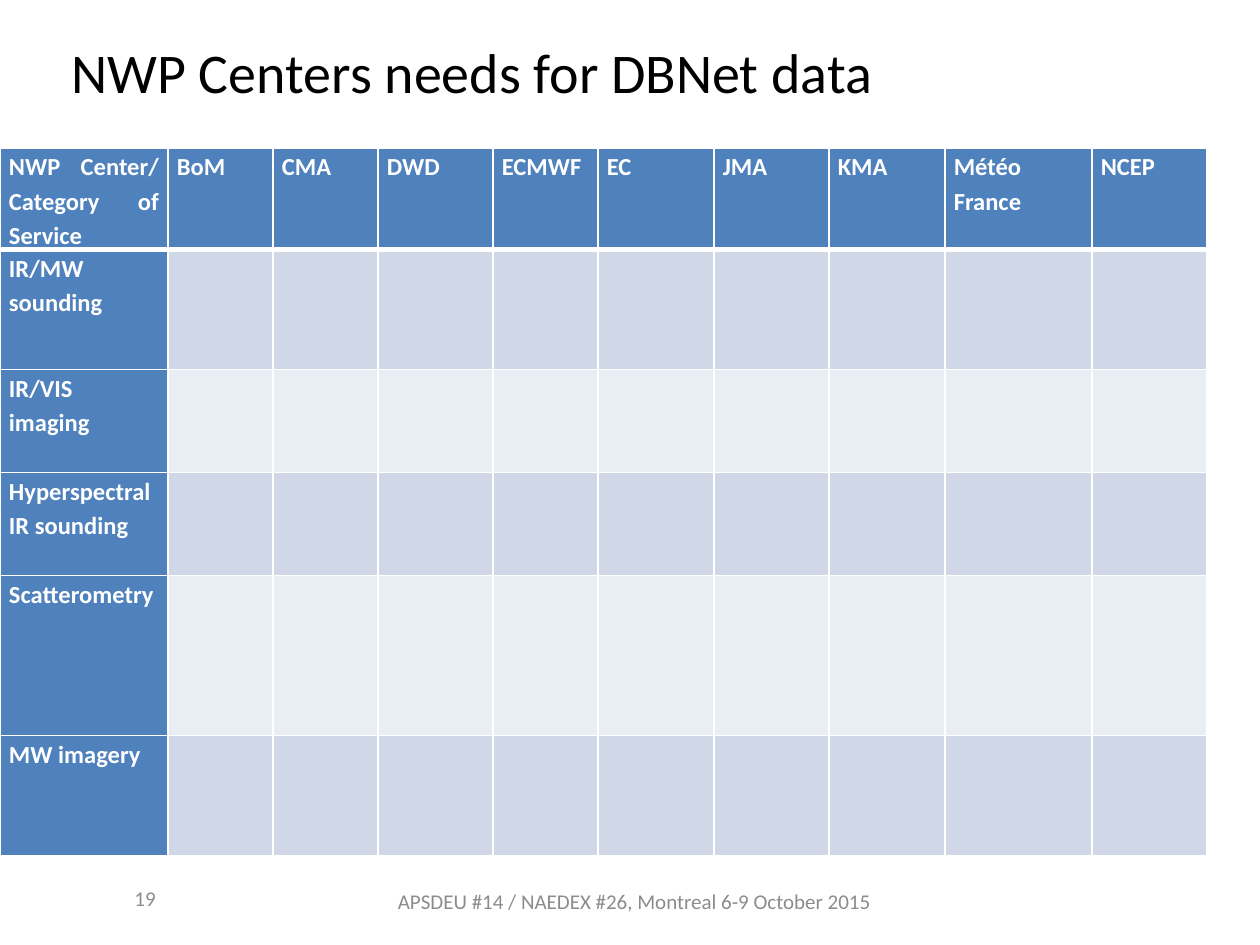
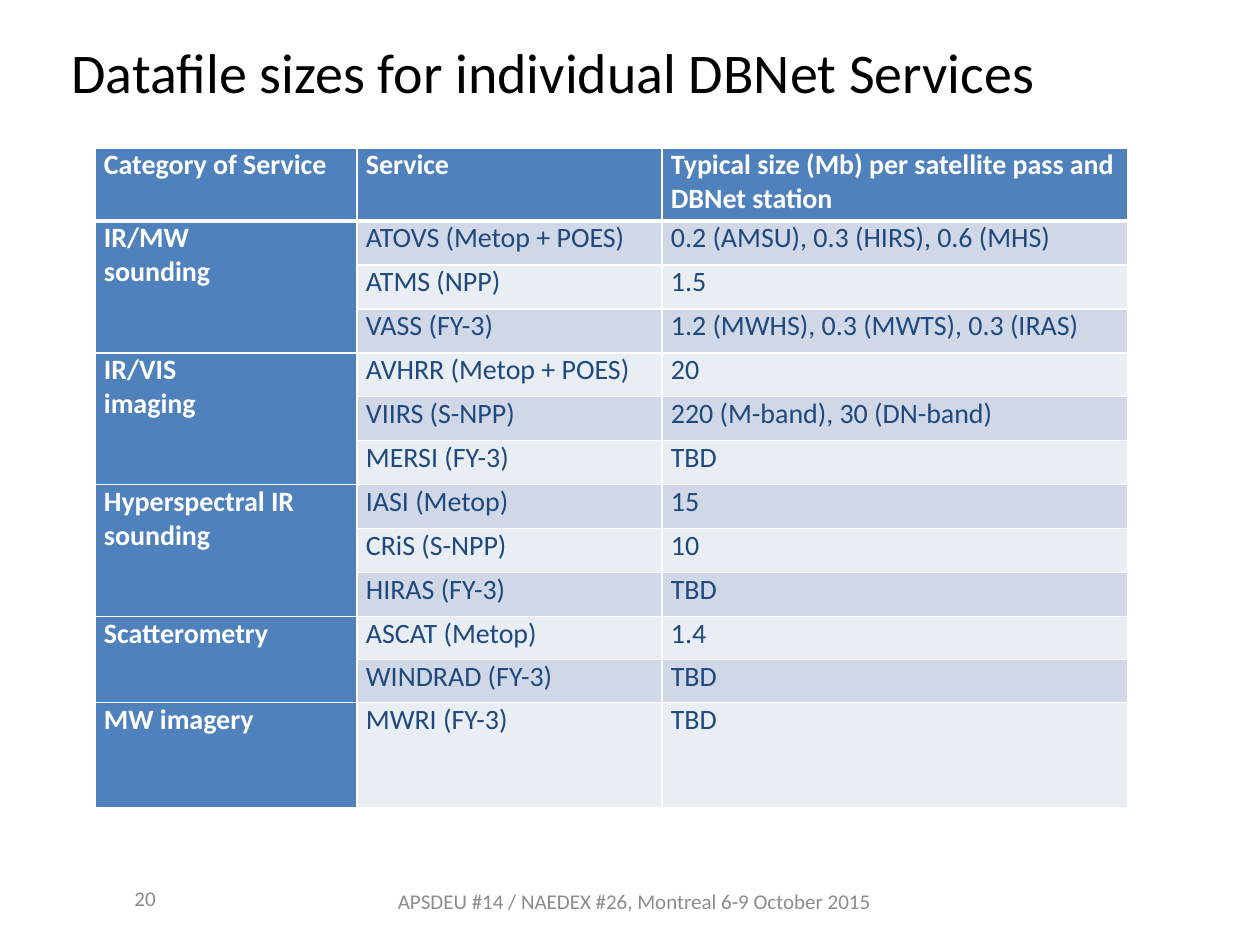
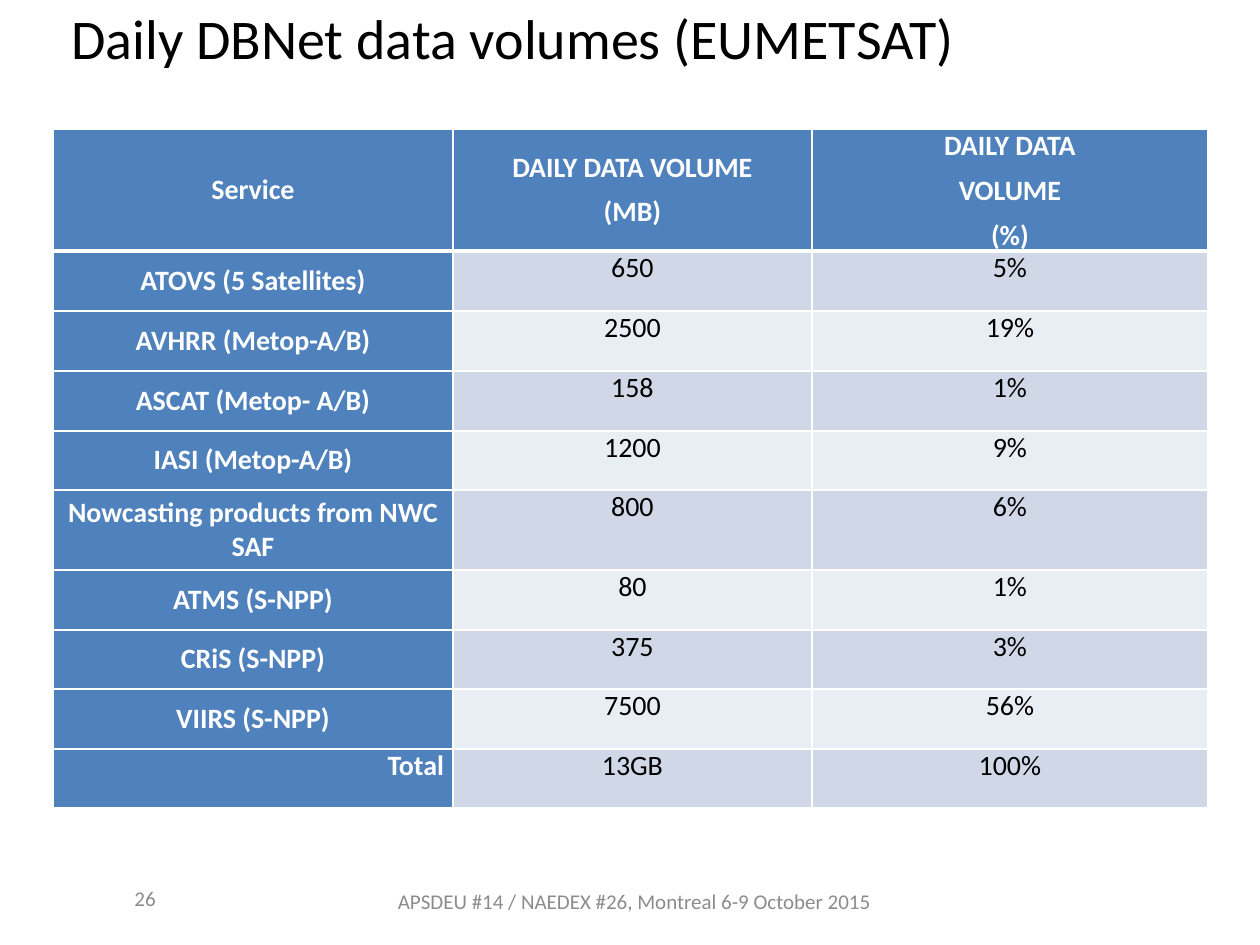
from dataclasses import dataclass

from lxml import etree
from pptx import Presentation
from pptx import util as u
from pptx.dml import color
from pptx.enum import text as t
from pptx.oxml import ns

SCALE = 914400 / 126
ALIGN, ANCHOR = t.PP_ALIGN, t.MSO_ANCHOR


@dataclass(frozen=True)
class Theme:
    """Colours, font and type sizes shared by the slides."""
    font: str = "Calibri"
    black: str = "000000"
    white: str = "FFFFFF"
    navy: str = "1F497D"
    grey: str = "8C8C8C"
    accent: str = "4F81BD"
    bands: tuple = ("D0D8E8", "E9EDF4")
    title: int = 32
    footer: int = 12
    compact: int = 14
    regular: int = 16


@dataclass(frozen=True)
class GridStyle:
    """Typography of one table."""
    size: int
    body: str = "000000"
    spacing: float = 1.0
    header_gap: int = 0
    gap: int = 0
    header_align: int = ALIGN.LEFT
    align: int = ALIGN.LEFT
    label_anchor: int = ANCHOR.TOP


THEME = Theme()
TITLE_BOX = (59, 26, 1149, 91)
RAISED_TITLE_BOX = (59, 3, 1149, 68)
FOOTER_BOX = (372, 876, 525, 50)
NUMBER_BOX = (62, 873, 106, 50)
EVENT = "APSDEU #14 / NAEDEX #26, Montreal 6-9 October 2015"

CENTERS = ["NWP Center/ Category of Service", "BoM", "CMA", "DWD", "ECMWF",
           "EC", "JMA", "KMA", "Météo France", "NCEP"]
CATEGORIES = ["IR/MW\vsounding", "IR/VIS\vimaging", "Hyperspectral IR sounding",
              "Scatterometry", "MW imagery"]
FILE_SIZES = [
    [("ATOVS (Metop + POES)", "0.2 (AMSU), 0.3 (HIRS), 0.6 (MHS)"),
     ("ATMS (NPP)", "1.5"),
     ("VASS (FY-3)", "1.2 (MWHS), 0.3 (MWTS), 0.3 (IRAS)")],
    [("AVHRR (Metop + POES)", "20"),
     ("VIIRS (S-NPP)", "220 (M-band), 30 (DN-band)"),
     ("MERSI (FY-3)", "TBD")],
    [("IASI (Metop)", "15"), ("CRiS (S-NPP)", "10"), ("HIRAS (FY-3)", "TBD")],
    [("ASCAT (Metop)", "1.4"), ("WINDRAD (FY-3)", "TBD")],
    [("MWRI (FY-3)", "TBD")],
]
VOLUMES = [
    ("Service", "DAILY DATA VOLUME\n(MB)", "DAILY DATA\nVOLUME\n(%)"),
    ("ATOVS (5 Satellites)", "650", "5%"),
    ("AVHRR (Metop-A/B)", "2500", "19%"),
    ("ASCAT (Metop- A/B)", "158", "1%"),
    ("IASI (Metop-A/B)", "1200", "9%"),
    ("Nowcasting products from NWC SAF", "800", "6%"),
    ("ATMS (S-NPP)", "80", "1%"),
    ("CRiS (S-NPP)", "375", "3%"),
    ("VIIRS (S-NPP)", "7500", "56%"),
    ("Total", "13GB", "100%"),
]


def px(length):
    """Turn pixels into EMU."""
    return u.Emu(round(length * SCALE))


def write(paragraph, words, size, rgb, bold=False):
    """Add words to a paragraph, breaking lines at vertical tabs."""
    for index, line in enumerate(words.split("\v")):
        if index:
            paragraph.add_line_break()
        run = paragraph.add_run()
        run.text = line
        run.font.name = THEME.font
        run.font.size = u.Pt(size)
        run.font.bold = bold
        run.font.color.rgb = color.RGBColor.from_string(rgb)


def add_label(slide, box, words, size, rgb, align):
    """Place one vertically centred line of text in a box."""
    frame = slide.shapes.add_textbox(*map(px, box)).text_frame
    frame.word_wrap = True
    frame.vertical_anchor = ANCHOR.MIDDLE
    frame.margin_top = frame.margin_bottom = 0
    frame.paragraphs[0].alignment = align
    write(frame.paragraphs[0], words, size, rgb)


def add_page(deck, title, number, title_box=TITLE_BOX):
    """Start a slide with its title, event footer and number."""
    slide = deck.slides.add_slide(deck.slide_layouts[6])
    add_label(slide, title_box, title, THEME.title, THEME.black, ALIGN.LEFT)
    add_label(slide, FOOTER_BOX, EVENT, THEME.footer, THEME.grey, ALIGN.CENTER)
    add_label(slide, NUMBER_BOX, str(number), THEME.footer, THEME.grey, ALIGN.RIGHT)
    return slide


def paint_cell(cell, row, col):
    """Fill a cell by its band and draw its white borders."""
    is_label = row == 0 or col == 0
    cell.fill.solid()
    cell.fill.fore_color.rgb = color.RGBColor.from_string(
        THEME.accent if is_label else THEME.bands[(row - 1) % 2])
    widths = {"L": 1, "R": 1, "T": 3 if row == 1 else 1, "B": 3 if row == 0 else 1}
    properties = cell._tc.get_or_add_tcPr()
    for index, (side, width) in enumerate(widths.items()):
        line = etree.Element(ns.qn(f"a:ln{side}"), w=str(u.Pt(width)))
        paint = etree.SubElement(line, ns.qn("a:solidFill"))
        etree.SubElement(paint, ns.qn("a:srgbClr"), val=THEME.white)
        properties.insert(index, line)


def write_cell(cell, words, row, col, style):
    """Set the text of a cell by its role in the table."""
    is_label = row == 0 or col == 0
    cell.margin_left = cell.margin_right = px(9)
    cell.margin_top = cell.margin_bottom = 0
    cell.vertical_anchor = style.label_anchor if is_label else ANCHOR.TOP
    gap = u.Pt(style.gap if row else style.header_gap)
    for index, line in enumerate(words.split("\n")):
        frame = cell.text_frame
        paragraph = frame.add_paragraph() if index else frame.paragraphs[0]
        paragraph.alignment = style.align if row else style.header_align
        paragraph.line_spacing = style.spacing
        paragraph.space_before = gap if index else 0
        paragraph.space_after = gap
        write(paragraph, line, style.size,
              THEME.white if is_label else style.body, is_label)


def add_grid(slide, corner, widths, heights, lines, style):
    """Draw a banded table with a header row and a label column."""
    box = (*corner, sum(widths), sum(heights))
    grid = slide.shapes.add_table(len(heights), len(widths), *map(px, box)).table
    grid.horz_banding = grid.first_row = False
    for column, width in zip(grid.columns, widths):
        column.width = px(width)
    for band, height in zip(grid.rows, heights):
        band.height = px(height)
    for row, line in enumerate(lines):
        for col, words in enumerate(line):
            cell = grid.cell(row, col)
            paint_cell(cell, row, col)
            if words:
                write_cell(cell, words, row, col, style)
    return grid


def add_needs(deck):
    """Build the empty matrix of centers and service categories."""
    slide = add_page(deck, "NWP Centers needs for DBNet data", 19)
    blanks = [""] * (len(CENTERS) - 1)
    lines = [CENTERS] + [[category, *blanks] for category in CATEGORIES]
    style = GridStyle(THEME.compact, spacing=1.15, gap=6, header_align=ALIGN.JUSTIFY)
    add_grid(slide, (0, 148), [168, 105, 105, 115, 105, 116, 115, 116, 147, 115],
             [101, 120, 103, 103, 160, 120], lines, style)


def add_file_sizes(deck):
    """Build the table of file sizes grouped by category."""
    slide = add_page(deck, "Datafile sizes for individual DBNet Services", 20)
    lines = [("Category of Service", "Service",
              "Typical size (Mb) per satellite pass and DBNet station")]
    spans = []
    for category, services in zip(CATEGORIES, FILE_SIZES):
        spans.append((len(lines), len(lines) + len(services) - 1))
        lines += [("" if index else category, *service)
                  for index, service in enumerate(services)]
    grid = add_grid(slide, (95, 148), [262, 305, 466],
                    [73] + [44] * 9 + [43] * 2 + [105], lines,
                    GridStyle(THEME.regular, THEME.navy))
    for first, last in spans:
        if last > first:
            grid.cell(first, 0).merge(grid.cell(last, 0))


def add_volumes(deck):
    """Build the table of daily volumes with its total."""
    slide = add_page(deck, "Daily DBNet data volumes (EUMETSAT)", 26, RAISED_TITLE_BOX)
    style = GridStyle(THEME.regular, header_gap=3, gap=3, header_align=ALIGN.CENTER,
                      align=ALIGN.CENTER, label_anchor=ANCHOR.MIDDLE)
    grid = add_grid(slide, (53, 129), [400, 359, 396],
                    [122, 60, 60, 60, 59, 80, 60, 59, 60, 59], VOLUMES, style)
    total = grid.cell(len(VOLUMES) - 1, 0)
    total.vertical_anchor = ANCHOR.TOP
    total.text_frame.paragraphs[0].alignment = ALIGN.RIGHT


def main():
    """Build the three slides and save them."""
    deck = Presentation()
    deck.slide_width, deck.slide_height = px(1260), px(945)
    for add_slide in (add_needs, add_file_sizes, add_volumes):
        add_slide(deck)
    deck.save("out.pptx")


if __name__ == "__main__":
    main()
